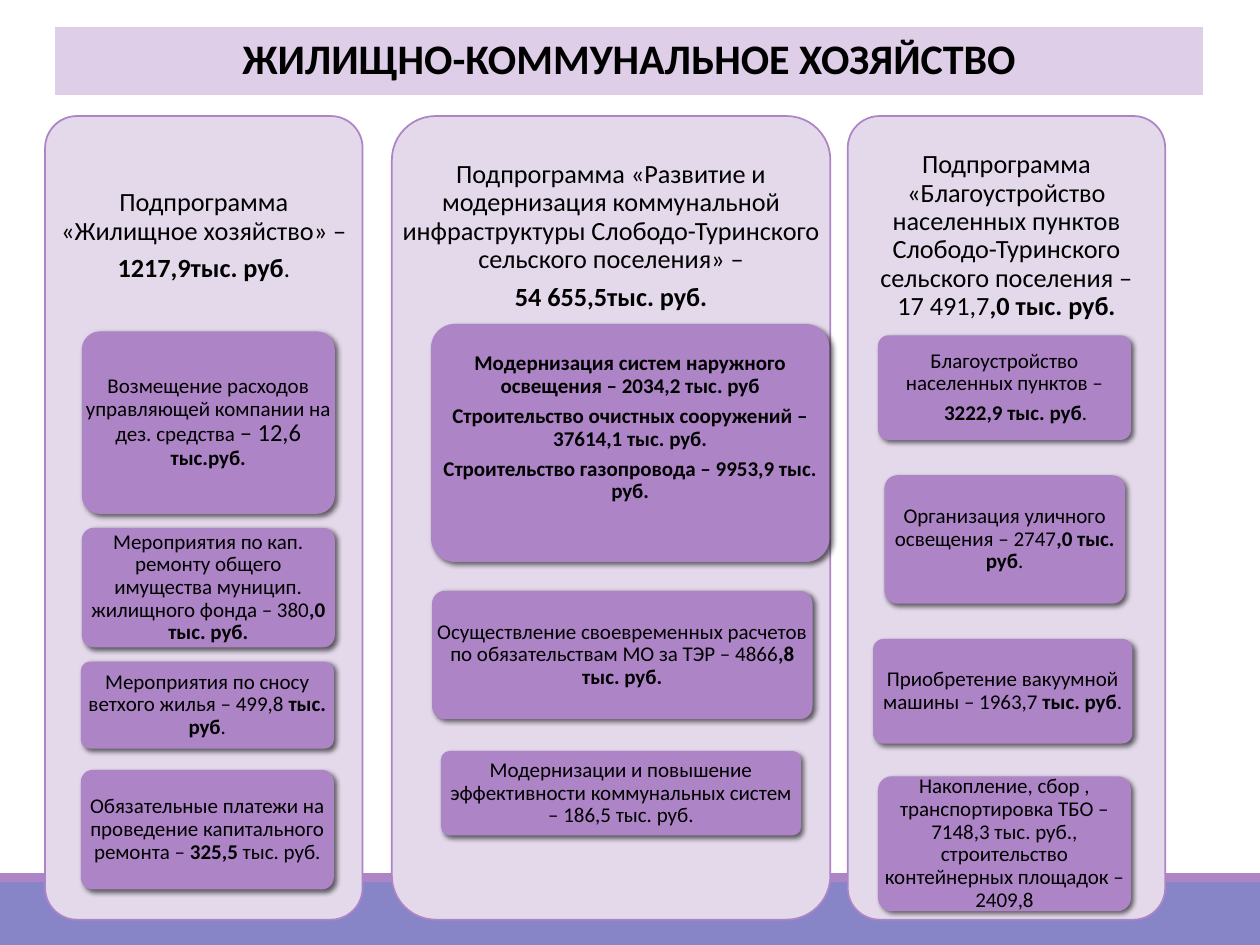
from lxml import etree
from pptx import Presentation
from pptx.dml.color import RGBColor
from pptx.enum.shapes import MSO_SHAPE
from pptx.enum.text import MSO_ANCHOR, PP_ALIGN
from pptx.oxml import parse_xml
from pptx.oxml.ns import nsdecls, qn
from pptx.util import Cm, Pt

RECT, ROUND = MSO_SHAPE.RECTANGLE, MSO_SHAPE.ROUNDED_RECTANGLE
MIDDLE, CENTER = MSO_ANCHOR.MIDDLE, PP_ALIGN.CENTER

BLACK = RGBColor(0, 0, 0)
WHITE = RGBColor(0xFF, 0xFF, 0xFF)
BLUE = RGBColor(0x87, 0x84, 0xC7)
PURPLE = RGBColor(0xAD, 0x84, 0xC6)
LILAC = RGBColor(0xDE, 0xCE, 0xE8)
PALE = RGBColor(0xE3, 0xD9, 0xEA)
FONT = "Calibri"

# Text marks: *bold*, ^14 pt^. Lengths are in centimetres.
TITLE = "*ЖИЛИЩНО-КОММУНАЛЬНОЕ ХОЗЯЙСТВО*"
TOP, TALL, HEAD = 2.34, 16.2, 4.85

# Each column: left, width, heading, cards (box, paragraphs, format)
COLUMNS = [
    (0.91, 6.4,
     ["Подпрограмма «Жилищное хозяйство» –", "*1217,9тыс. руб*^.^"],
     [((1.65, 6.68, 5.1, 3.68),
       ["Возмещение расходов управляющей компании на дез. средства "
        "^– 12,6 ^*тыс.руб.*"], {}),
      ((1.65, 10.64, 5.1, 2.41),
       ["Мероприятия по кап. ремонту общего имущества муницип. "
        "жилищного фонда – 380*,0 тыс. руб.*"], {}),
      ((1.63, 13.34, 5.1, 1.75),
       ["Мероприятия по сносу ветхого жилья – 499,8* тыс. руб*."], {}),
      ((1.63, 15.52, 5.1, 2.41),
       ["Обязательные платежи на проведение капитального ремонта – "
        "*325,5 *тыс. руб."], {})]),
    (7.9, 8.84,
     ["Подпрограмма «Развитие и модернизация коммунальной "
      "инфраструктуры Слободо-Туринского сельского поселения» –",
      "*54 655,5тыс. руб.*"],
     [((8.69, 6.53, 8.03, 4.8),
       ["*Модернизация систем наружного освещения – 2034,2 тыс. руб*",
        "*Строительство очистных сооружений – 37614,1 тыс. руб.*",
        "*Строительство газопровода – 9953,9 тыс. руб.*"], {"low": 0.6}),
      ((8.71, 11.91, 7.67, 2.59),
       ["Осуществление своевременных расчетов по обязательствам МО "
        "за ТЭР – 4866*,8 тыс. руб.*"], {}),
      ((8.89, 15.14, 7.26, 1.7),
       ["Модернизации и повышение эффективности коммунальных систем "
        "– 186,5 тыс. руб."], {})]),
    (17.09, 6.4,
     ["Подпрограмма «Благоустройство населенных пунктов "
      "Слободо-Туринского сельского поселения –\v17 491,7*,0 тыс. руб.*"],
     [((17.7, 6.76, 5.1, 2.11),
       ["Благоустройство населенных пунктов –", "*3222,9 тыс. руб*."],
       {"shift": 0.45}),
      ((17.83, 9.58, 4.85, 2.59),
       ["Организация уличного освещения – 2747*,0 тыс. руб*."], {}),
      ((17.6, 12.88, 5.23, 2.11),
       ["Приобретение вакуумной машины – 1963,7* тыс. руб*."], {}),
      ((17.7, 15.65, 5.1, 2.72),
       ["Накопление, сбор , транспортировка ТБО – 7148,3 тыс. руб., "
        "строительство контейнерных площадок – 2409,8"], {})]),
]


def paint(shape, fill, line=None, width=1):
    shape.fill.solid()
    shape.fill.fore_color.rgb = fill
    if line is None:
        shape.line.fill.background()
    else:
        shape.line.color.rgb = line
        shape.line.width = Pt(width)


def add_box(shapes, kind, box, fill, line=None):
    shape = shapes.add_shape(kind, *map(Cm, box))
    shape.shadow.inherit = False
    paint(shape, fill, line)
    if kind == ROUND:
        shape.adjustments[0] = 0.1
    return shape


def add_shadow(shape):
    """Give the shape a soft shadow to the lower right."""
    glow = shape._element.spPr.find(qn("a:effectLst"))
    cast = etree.SubElement(glow, qn("a:outerShdw"), blurRad="38100",
                            dist="25400", dir="2700000", rotWithShape="0")
    tint = etree.SubElement(cast, qn("a:srgbClr"), val="000000")
    etree.SubElement(tint, qn("a:alpha"), val="60000")


def put_text(shape, lines, size=12, pad=0.08, low=0, shift=0):
    """Write marked lines; low lifts the text, shift indents the last line."""
    frame = shape.text_frame
    frame.word_wrap = True
    frame.vertical_anchor = MIDDLE
    frame.margin_left = frame.margin_right = frame.margin_top = Cm(pad)
    frame.margin_bottom = Cm(pad + low)
    for i, line in enumerate(lines):
        para = frame.paragraphs[0] if i == 0 else frame.add_paragraph()
        para.alignment = CENTER
        para.line_spacing = 0.9
        para.space_before = Pt(0)
        para.space_after = Pt(0.35 * size)
        for j, part in enumerate(line.split("*")):
            for k, piece in enumerate(part.split("^")):
                for n, words in enumerate(piece.split("\v")):
                    if n:
                        para.add_line_break()
                    if words:
                        run = para.add_run()
                        run.text = words
                        run.font.name = FONT
                        run.font.size = Pt(14 if k % 2 else size)
                        run.font.bold = j % 2 == 1
                        run.font.color.rgb = BLACK
    if shift:
        para._p.get_or_add_pPr().set("marL", str(Cm(shift)))


def add_text(shapes, box, lines, **form):
    put_text(shapes.add_textbox(*map(Cm, box)), lines, **form)


def add_title(slide):
    title = slide.shapes.title
    title.left, title.top = Cm(1.09), Cm(0.53)
    title.width, title.height = Cm(23.19), Cm(1.4)
    title._element.spPr.append(parse_xml(
        f'<a:prstGeom {nsdecls("a")} prst="roundRect"><a:avLst>'
        '<a:gd name="adj" fmla="val 50000"/></a:avLst></a:prstGeom>'))
    paint(title, LILAC, WHITE, 1.25)
    put_text(title, [TITLE], size=24)
    title.text_frame.paragraphs[0].space_after = Pt(0)


def add_column(slide, left, width, head, cards):
    shapes = slide.shapes.add_group_shape().shapes
    add_box(shapes, ROUND, (left, TOP, width, TALL), PALE, PURPLE)
    add_text(shapes, (left, TOP, width, HEAD), head, size=15, pad=0.15)
    for box, lines, form in cards:
        add_shadow(add_box(shapes, ROUND, box, PURPLE))
        add_text(shapes, box, lines, **form)


def main():
    deck = Presentation()
    deck.slide_width, deck.slide_height = Cm(25.4), Cm(19.05)
    slide = deck.slides.add_slide(deck.slide_layouts[5])
    add_box(slide.shapes, RECT, (0, 17.78, 25.4, 1.27), BLUE)
    add_box(slide.shapes, RECT, (0, 17.6, 25.4, 0.18), PURPLE)
    add_title(slide)
    for column in COLUMNS:
        add_column(slide, *column)
    deck.save("out.pptx")


if __name__ == "__main__":
    main()
